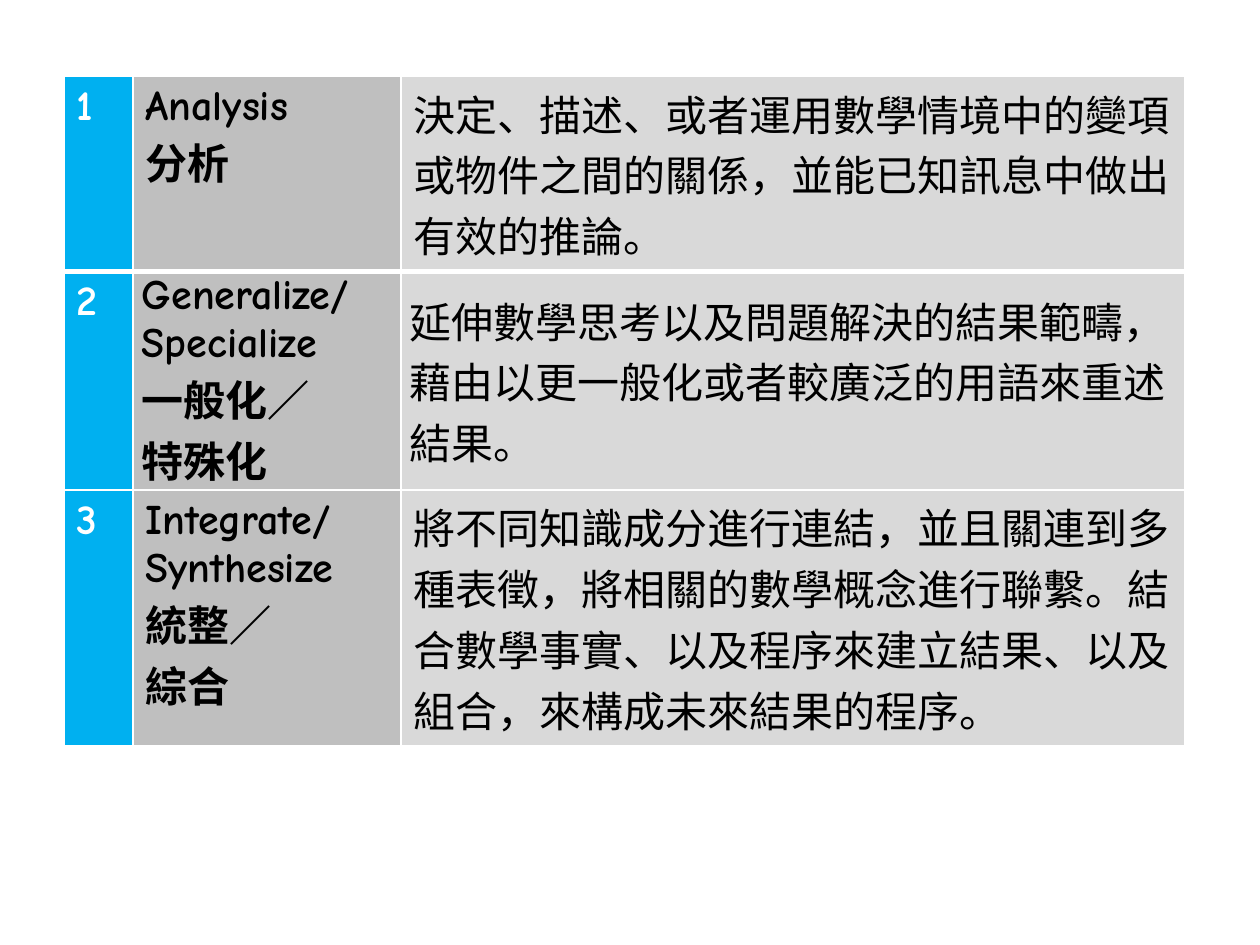
from lxml import etree
from pptx import Presentation
from pptx.dml.color import RGBColor
from pptx.enum.text import MSO_ANCHOR
from pptx.oxml.ns import qn
from pptx.util import Emu, Pt

TOP, MIDDLE = MSO_ANCHOR.TOP, MSO_ANCHOR.MIDDLE
EMU_PER_PX = 914400 / 126
BLANK_LAYOUT = 6
COLUMN_WIDTHS = [69, 268, 784]
ROW_HEIGHTS = [106, 134, 173]
TABLE_HEIGHT = 580
COLUMN_STYLES = [
    {"fill": "00B0F0", "color": "FFFFFF", "bold": True},
    {"fill": "BFBFBF", "color": "000000", "bold": True},
    {"fill": "D9D9D9", "color": "000000", "bold": False},
]
ROW_BORDERS = [{"T": 1, "B": 3}, {"T": 3, "B": 1}, {"T": 1, "B": 1}]
TIGHT = {
    "vertical_anchor": MIDDLE,
    "margin_left": 9,
    "margin_right": 9,
    "margin_top": 0,
    "margin_bottom": 0,
}
PROCESSES = [
    ("1", "Analysis\n分析",
     "決定、描述、或者運用數學情境中的變項或物件之間的關係，並能已知訊息中做出有效的推論。"),
    ("2", "Generalize/\nSpecialize\n一般化／\n特殊化",
     "延伸數學思考以及問題解決的結果範疇，藉由以更一般化或者較廣泛的用語來重述結果。"),
    ("3", "Integrate/\nSynthesize\n統整／\n綜合",
     "將不同知識成分進行連結，並且關連到多種表徵，將相關的數學概念進行聯繫。"
     "結合數學事實、以及程序來建立結果、以及組合，來構成未來結果的程序。"),
]


def px(length):
    return Emu(round(length * EMU_PER_PX))


def rgb(value):
    return RGBColor.from_string(value)


class SlideBuilder:
    """Holds the text style and the current slide."""

    font = {"name": "Comic Neue", "size": Pt(24)}
    border_color = "FFFFFF"

    def __init__(self, slide):
        self.slide = slide

    def table(self, left, top, widths, heights, total_height):
        frame = self.slide.shapes.add_table(
            len(heights), len(widths), px(left), px(top), px(sum(widths)), px(total_height))
        grid = frame.table
        grid.first_row = grid.horz_banding = False
        for column, width in zip(grid.columns, widths):
            column.width = px(width)
        for row, height in zip(grid.rows, heights):
            row.height = px(height)
        frame.height = px(total_height)
        return grid

    def borders(self, cell, widths):
        properties = cell._tc.get_or_add_tcPr()
        for side in "LRTB":
            line = etree.SubElement(
                properties, qn(f"a:ln{side}"), w=str(Pt(widths.get(side, 1))))
            fill = etree.SubElement(line, qn("a:solidFill"))
            etree.SubElement(fill, qn("a:srgbClr"), val=self.border_color)

    def cell(self, cell, text, style, border_widths, layout):
        self.borders(cell, border_widths)
        cell.fill.solid()
        cell.fill.fore_color.rgb = rgb(style["fill"])
        for name, value in layout.items():
            setattr(cell, name, px(value) if name.startswith("margin") else value)
        cell.text = text
        for paragraph in cell.text_frame.paragraphs:
            for run in paragraph.runs:
                for name, value in {**self.font, "bold": style["bold"]}.items():
                    setattr(run.font, name, value)
                run.font.color.rgb = rgb(style["color"])


def main():
    presentation = Presentation()
    presentation.slide_width, presentation.slide_height = px(1260), px(945)
    slide = presentation.slides.add_slide(presentation.slide_layouts[BLANK_LAYOUT])
    builder = SlideBuilder(slide)
    grid = builder.table(64, 76, COLUMN_WIDTHS, ROW_HEIGHTS, TABLE_HEIGHT)
    for row, (process, border_widths) in enumerate(zip(PROCESSES, ROW_BORDERS)):
        for column, (text, style) in enumerate(zip(process, COLUMN_STYLES)):
            layout = TIGHT if row == 1 and column > 0 else {"vertical_anchor": TOP}
            builder.cell(grid.cell(row, column), text, style, border_widths, layout)
    presentation.save("out.pptx")


if __name__ == "__main__":
    main()
